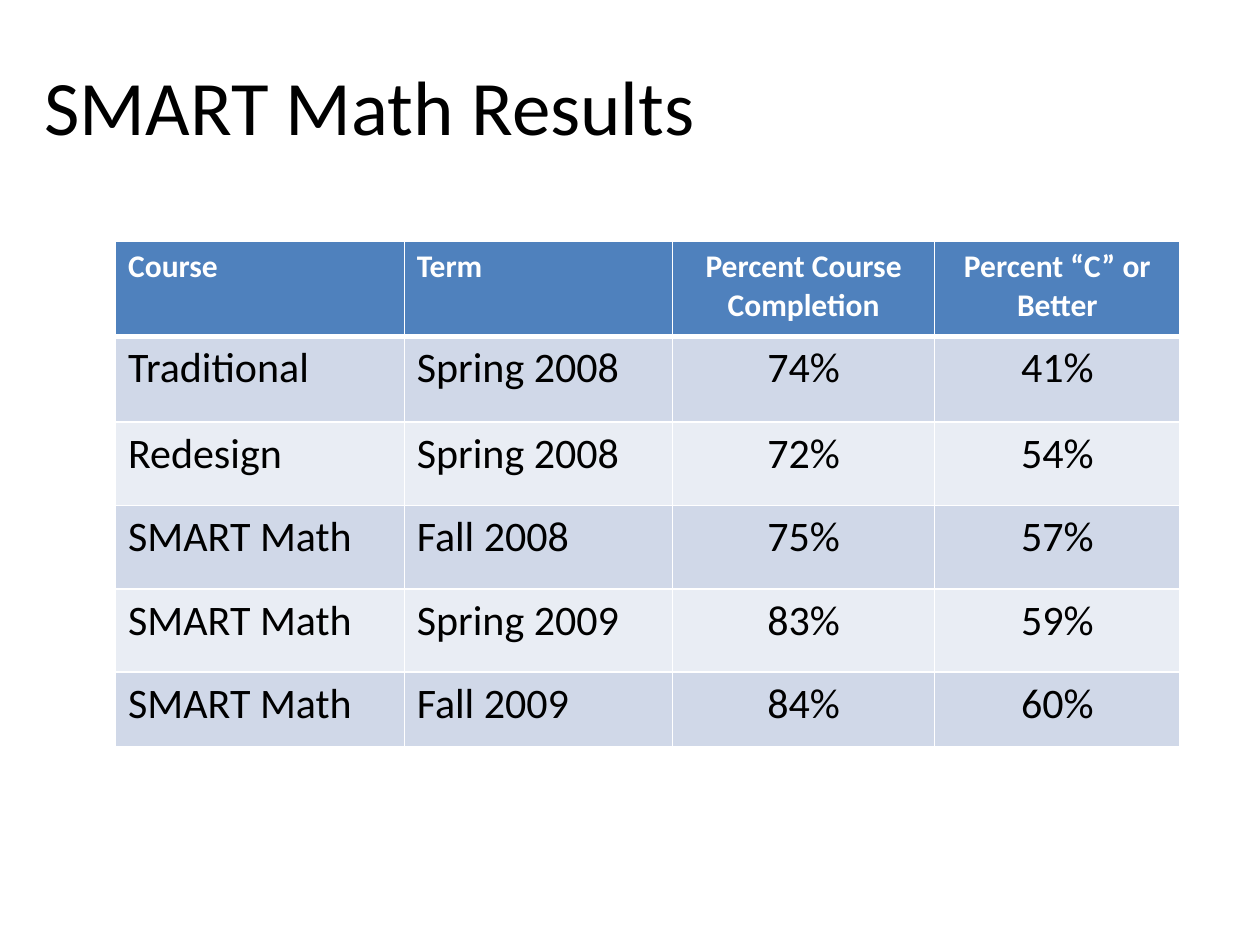
from dataclasses import dataclass

from lxml.etree import SubElement
from pptx import Presentation
from pptx.dml.color import RGBColor
from pptx.enum.text import MSO_ANCHOR, PP_ALIGN
from pptx.oxml.ns import qn
from pptx.util import Cm, Pt


@dataclass(frozen=True)
class Theme:
    font: str = "Calibri"
    title_size: int = 44
    header_size: int = 18
    body_size: int = 24
    text: str = "000000"
    header_text: str = "FFFFFF"
    header_fill: str = "4F81BD"
    bands: tuple = ("D0D8E8", "E9EDF4")
    border: str = "FFFFFF"
    border_width: int = 1
    header_rule: int = 3


THEME = Theme()

RESULTS = [
    ("Course", "Term", "Percent Course Completion", "Percent “C” or Better"),
    ("Traditional", "Spring 2008", "74%", "41%"),
    ("Redesign", "Spring 2008", "72%", "54%"),
    ("SMART Math", "Fall 2008", "75%", "57%"),
    ("SMART Math", "Spring 2009", "83%", "59%"),
    ("SMART Math", "Fall 2009", "84%", "60%"),
]
COLUMN_WIDTHS = (5.82, 5.41, 5.28, 4.95)
ROW_HEIGHTS = (1.91, 1.73, 1.68, 1.68, 1.68, 1.5)
FIRST_CENTERED_COLUMN = 2


def format_paragraph(para, size, color, alignment, bold=False):
    para.alignment = alignment
    for span in para.runs:
        span.font.name = THEME.font
        span.font.size = Pt(size)
        span.font.bold = bold
        span.font.color.rgb = RGBColor.from_string(color)


def set_border(cell, side, width):
    properties = cell._tc.get_or_add_tcPr()
    line = SubElement(properties, qn(f"a:{side}"), w=str(Pt(width)))
    fill = SubElement(line, qn("a:solidFill"))
    SubElement(fill, qn("a:srgbClr"), val=THEME.border)


def add_title(page, text, left, top, width, height):
    box = page.shapes.title
    box.left, box.top, box.width, box.height = map(Cm, (left, top, width, height))
    frame = box.text_frame
    frame.text = text
    frame.word_wrap = True
    frame.vertical_anchor = MSO_ANCHOR.MIDDLE
    format_paragraph(frame.paragraphs[0], THEME.title_size, THEME.text, PP_ALIGN.LEFT)


def fill_cell(cell, text, row, column):
    is_header = row == 0
    cell.text = text
    cell.vertical_anchor = MSO_ANCHOR.TOP
    centered = column >= FIRST_CENTERED_COLUMN
    format_paragraph(
        cell.text_frame.paragraphs[0],
        THEME.header_size if is_header else THEME.body_size,
        THEME.header_text if is_header else THEME.text,
        PP_ALIGN.CENTER if centered else PP_ALIGN.LEFT,
        bold=is_header,
    )

    # Borders come before the fill in the cell properties
    for side in ("lnL", "lnR", "lnT", "lnB"):
        under_header = (row, side) in ((0, "lnB"), (1, "lnT"))
        set_border(cell, side, THEME.header_rule if under_header else THEME.border_width)
    color = THEME.header_fill if is_header else THEME.bands[(row - 1) % 2]
    cell.fill.solid()
    cell.fill.fore_color.rgb = RGBColor.from_string(color)


def add_results_table(page, left, top):
    box = page.shapes.add_table(
        len(RESULTS), len(COLUMN_WIDTHS), Cm(left), Cm(top),
        Cm(sum(COLUMN_WIDTHS)), Cm(sum(ROW_HEIGHTS)),
    )
    table = box.table
    for column, width in zip(table.columns, COLUMN_WIDTHS):
        column.width = Cm(width)
    for row, height in zip(table.rows, ROW_HEIGHTS):
        row.height = Cm(height)
    for row, values in enumerate(RESULTS):
        for column, text in enumerate(values):
            fill_cell(table.cell(row, column), text, row, column)


def main():
    deck = Presentation()
    deck.slide_width, deck.slide_height = Cm(25.4), Cm(19.05)
    page = deck.slides.add_slide(deck.slide_layouts[5])
    add_title(page, "SMART Math Results", 0.64, 1.06, 21.59, 2.12)
    add_results_table(page, 2.33, 4.87)
    deck.save("out.pptx")


if __name__ == "__main__":
    main()
